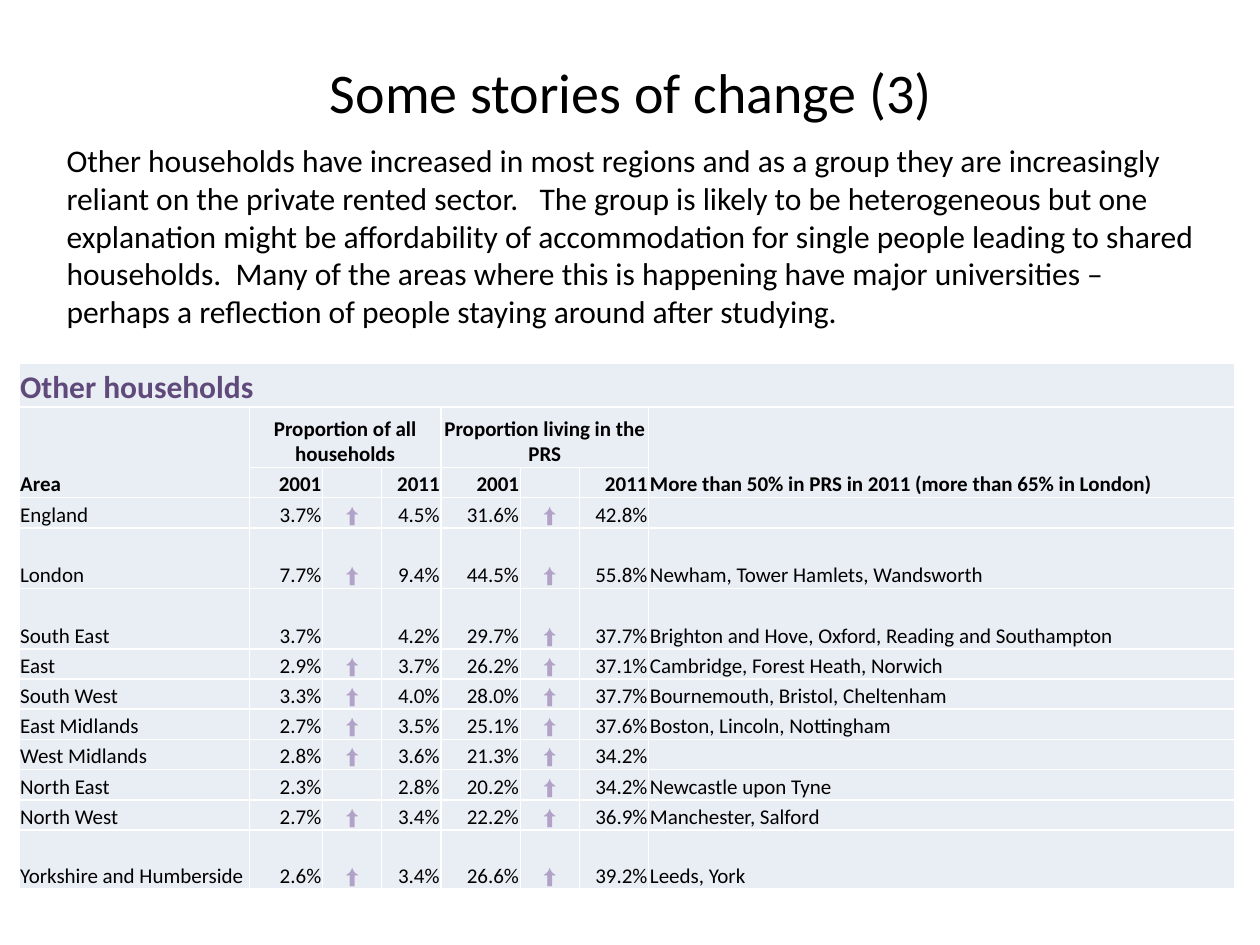
"""Build a slide on the growth of other households, with a table by region."""
from lxml import etree
from pptx import Presentation
from pptx.dml.color import RGBColor
from pptx.enum.text import MSO_ANCHOR, PP_ALIGN
from pptx.oxml.ns import qn
from pptx.util import Inches, Pt

LEFT, CENTER, RIGHT = PP_ALIGN.LEFT, PP_ALIGN.CENTER, PP_ALIGN.RIGHT
TOP, MIDDLE, BOTTOM = MSO_ANCHOR.TOP, MSO_ANCHOR.MIDDLE, MSO_ANCHOR.BOTTOM
FONT = "Calibri"
COLORS = {"text": "000000", "heading": "604A7B", "arrow": "B3A2C7",
          "cell": "E9EDF4", "border": "FFFFFF"}

TITLE = "Some stories of change (3)"
SUMMARY = (
    "Other households have increased in most regions and as a group they are "
    "increasingly reliant on the private rented sector.   The group is likely to be "
    "heterogeneous but one explanation might be affordability of accommodation for "
    "single people leading to shared households.  Many of the areas where this is "
    "happening have major universities – perhaps a reflection of people staying "
    "around after studying."
)
UP = "⬆"
HEADER_ROWS = [
    ("Other households", "", "", "", "", "", "", ""),
    ("Area", "Proportion of all households", "", "", "Proportion living in the PRS",
     "", "", "More than 50% in PRS in 2011 (more than 65% in London)"),
    ("", "2001", "", "2011", "2001", "", "2011", ""),
]
REGION_ROWS = [
    ("England", "3.7%", UP, "4.5%", "31.6%", UP, "42.8%", ""),
    ("London", "7.7%", UP, "9.4%", "44.5%", UP, "55.8%",
     "Newham, Tower Hamlets, Wandsworth"),
    ("South East", "3.7%", "", "4.2%", "29.7%", UP, "37.7%",
     "Brighton and Hove, Oxford, Reading and Southampton"),
    ("East", "2.9%", UP, "3.7%", "26.2%", UP, "37.1%",
     "Cambridge, Forest Heath, Norwich"),
    ("South West", "3.3%", UP, "4.0%", "28.0%", UP, "37.7%",
     "Bournemouth, Bristol, Cheltenham"),
    ("East Midlands", "2.7%", UP, "3.5%", "25.1%", UP, "37.6%",
     "Boston, Lincoln, Nottingham"),
    ("West Midlands", "2.8%", UP, "3.6%", "21.3%", UP, "34.2%", ""),
    ("North East", "2.3%", "", "2.8%", "20.2%", UP, "34.2%", "Newcastle upon Tyne"),
    ("North West", "2.7%", UP, "3.4%", "22.2%", UP, "36.9%", "Manchester, Salford"),
    ("Yorkshire and Humberside", "2.6%", UP, "3.4%", "26.6%", UP, "39.2%",
     "Leeds, York"),
]
ROWS = HEADER_ROWS + REGION_ROWS
COLUMN_WIDTHS = [1.83, 0.58, 0.47, 0.47, 0.63, 0.47, 0.55, 4.65]
COLUMN_ALIGNMENTS = [LEFT, RIGHT, CENTER, RIGHT, RIGHT, CENTER, RIGHT, LEFT]
ROW_HEIGHT = 0.24
SPECIAL_HEIGHTS = {0: 0.35, 1: 0.48, 4: 0.48, 5: 0.48, 12: 0.47}
MERGES = [((0, 0), (0, 7)), ((1, 0), (2, 0)), ((1, 1), (1, 3)),
          ((1, 4), (1, 6)), ((1, 7), (2, 7))]


def write(text_frame, text, size, alignment, color="text", bold=False):
    text_frame.text = text
    paragraph = text_frame.paragraphs[0]
    paragraph.alignment = alignment
    for run in paragraph.runs:
        run.font.name = FONT
        run.font.size = Pt(size)
        run.font.bold = bold
        run.font.color.rgb = RGBColor.from_string(COLORS[color])
    if not text:
        etree.SubElement(paragraph._p, qn("a:endParaRPr"), sz=str(size * 100))


def add_text(slide, box, text, size, alignment, anchor):
    shape = slide.shapes.add_textbox(*map(Inches, box))
    shape.text_frame.word_wrap = True
    shape.text_frame.vertical_anchor = anchor
    write(shape.text_frame, text, size, alignment)


def add_borders(cell):
    properties = cell._tc.get_or_add_tcPr()
    for position, side in enumerate(("lnL", "lnR", "lnT", "lnB")):
        line = etree.Element(qn(f"a:{side}"), w=str(Pt(1)))
        fill = etree.SubElement(line, qn("a:solidFill"))
        etree.SubElement(fill, qn("a:srgbClr"), val=COLORS["border"])
        properties.insert(position, line)


def format_cell(cell, text, row, column):
    cell.margin_left = cell.margin_right = cell.margin_top = Inches(0.01)
    cell.margin_bottom = 0
    cell.vertical_anchor = BOTTOM
    cell.fill.solid()
    cell.fill.fore_color.rgb = RGBColor.from_string(COLORS["cell"])
    add_borders(cell)
    size = 18 if row == 0 and text else 12
    color = "heading" if row == 0 else "arrow" if text == UP else "text"
    spans_years = row == 1 and 0 < column < 7
    alignment = CENTER if spans_years else COLUMN_ALIGNMENTS[column]
    write(cell.text_frame, text, size, alignment, color, row < len(HEADER_ROWS))


def add_household_table(slide):
    heights = [SPECIAL_HEIGHTS.get(row, ROW_HEIGHT) for row in range(len(ROWS))]
    box = (0.15, 2.88, sum(COLUMN_WIDTHS), sum(heights))
    table = slide.shapes.add_table(
        len(ROWS), len(COLUMN_WIDTHS), *map(Inches, box)).table
    table.first_row = table.horz_banding = False
    for column, width in zip(table.columns, COLUMN_WIDTHS):
        column.width = Inches(width)
    for row, height in zip(table.rows, heights):
        row.height = Inches(height)
    for row, texts in enumerate(ROWS):
        for column, text in enumerate(texts):
            format_cell(table.cell(row, column), text, row, column)
    for first, last in MERGES:
        table.cell(*first).merge(table.cell(*last))


def main():
    presentation = Presentation()
    presentation.slide_width, presentation.slide_height = Inches(10), Inches(7.5)
    slide = presentation.slides.add_slide(presentation.slide_layouts[6])
    add_text(slide, (0.51, 0.21, 9, 1.02), TITLE, 32, CENTER, MIDDLE)
    add_text(slide, (0.43, 1.07, 9.21, 1.62), SUMMARY, 18, LEFT, TOP)
    add_household_table(slide)
    presentation.save("out.pptx")


if __name__ == "__main__":
    main()
